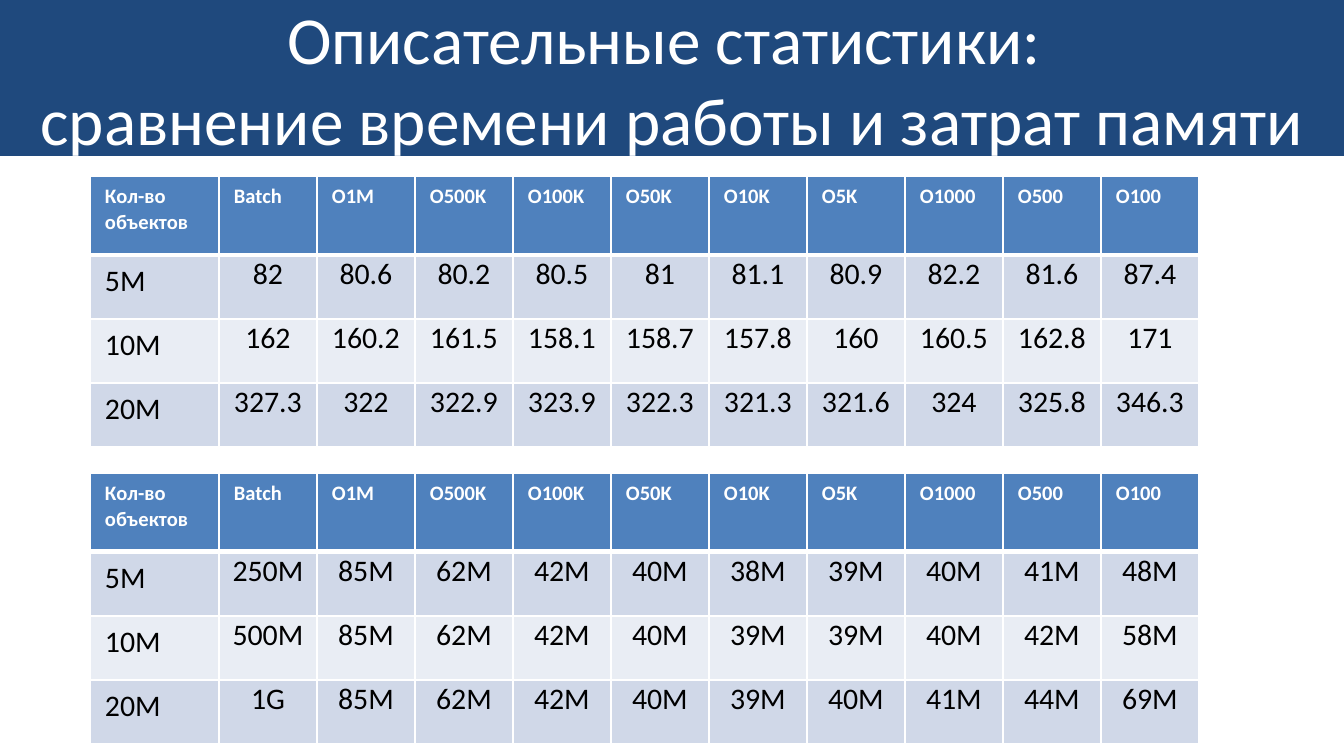
from lxml import etree
from pptx import Presentation
from pptx.dml.color import RGBColor
from pptx.enum.shapes import MSO_SHAPE
from pptx.enum.text import MSO_ANCHOR, PP_ALIGN
from pptx.oxml.ns import qn
from pptx.util import Pt

EMU_PER_PX = 914400 / 134.4
RECTANGLE = MSO_SHAPE.RECTANGLE
MIDDLE = MSO_ANCHOR.MIDDLE
LEFT, CENTER = PP_ALIGN.LEFT, PP_ALIGN.CENTER

NAVY = RGBColor(0x1F, 0x49, 0x7D)
BLUE = RGBColor(0x4F, 0x81, 0xBD)
BAND_DARK = RGBColor(0xD0, 0xD8, 0xE8)
BAND_LIGHT = RGBColor(0xE9, 0xED, 0xF4)
WHITE = RGBColor(0xFF, 0xFF, 0xFF)
BLACK = RGBColor(0, 0, 0)

TITLE_FONT = {"name": "Calibri", "size": Pt(36), "bold": False}
HEADER_FONT = {"name": "Calibri", "size": Pt(11), "bold": True}
BODY_FONT = {"name": "Calibri", "size": Pt(16), "bold": False}

COLUMN_WIDTHS = [129] + [98] * 10
ROW_HEIGHTS = [79] + [64] * 3
LABEL_MARGINS = (15, 8, 15, 8)
VALUE_MARGINS = (1, 1, 1, 0)

TITLE = "Описательные статистики: \vсравнение времени работы и затрат памяти"
HEADER = ["Кол-во объектов", "Batch", "O1M", "O500K", "O100K", "O50K",
          "O10K", "O5K", "O1000", "O500", "O100"]
RUN_TIMES = [
    "5M 82 80.6 80.2 80.5 81 81.1 80.9 82.2 81.6 87.4".split(),
    "10M 162 160.2 161.5 158.1 158.7 157.8 160 160.5 162.8 171".split(),
    "20M 327.3 322 322.9 323.9 322.3 321.3 321.6 324 325.8 346.3".split(),
]
MEMORY_USE = [
    "5M 250M 85M 62M 42M 40M 38M 39M 40M 41M 48M".split(),
    "10M 500M 85M 62M 42M 40M 39M 39M 40M 42M 58M".split(),
    "20M 1G 85M 62M 42M 40M 39M 40M 41M 44M 69M".split(),
]


def px(length):
    """Turn whole pixels into EMU."""
    return round(length * EMU_PER_PX)


def write_text(frame, text, font, color, align):
    """Write one formatted paragraph into a text frame."""
    paragraph = frame.paragraphs[0]
    paragraph.text = text
    paragraph.alignment = align
    for run in paragraph.runs:
        for attribute, value in font.items():
            setattr(run.font, attribute, value)
        run.font.color.rgb = color


def add_title(slide):
    """Draw the title band across the top."""
    band = slide.shapes.add_shape(RECTANGLE, 0, 0, px(1344), px(156))
    band.shadow.inherit = False
    band.fill.solid()
    band.fill.fore_color.rgb = NAVY
    band.line.fill.background()
    band.text_frame.word_wrap = True
    band.text_frame.vertical_anchor = MIDDLE
    write_text(band.text_frame, TITLE, TITLE_FONT, WHITE, CENTER)


def set_borders(cell, bottom_width):
    """Give a cell white borders, with its own bottom width in points."""
    properties = cell._tc.get_or_add_tcPr()
    for side, width in (("L", 1), ("R", 1), ("T", 1), ("B", bottom_width)):
        line = etree.SubElement(properties, qn(f"a:ln{side}"), w=str(Pt(width)))
        fill = etree.SubElement(line, qn("a:solidFill"))
        etree.SubElement(fill, qn("a:srgbClr"), val=str(WHITE))


def fill_cell(cell, text, row, column):
    """Style a cell by its place in the table."""
    is_header = row == 0
    is_value = row > 0 and column > 0
    set_borders(cell, 3 if is_header else 1)
    cell.fill.solid()
    band = BAND_DARK if row % 2 else BAND_LIGHT
    cell.fill.fore_color.rgb = BLUE if is_header else band
    margins = VALUE_MARGINS if is_value else LABEL_MARGINS
    for side, margin in zip(("left", "top", "right", "bottom"), margins):
        setattr(cell, f"margin_{side}", px(margin))
    write_text(cell.text_frame, text,
               HEADER_FONT if is_header else BODY_FONT,
               WHITE if is_header else BLACK,
               CENTER if is_value else LEFT)


def add_statistics(slide, top, measurements):
    """Add one table of measurements under the common header."""
    rows = [HEADER] + measurements
    table = slide.shapes.add_table(
        len(rows), len(HEADER), px(90), px(top),
        px(sum(COLUMN_WIDTHS)), px(sum(ROW_HEIGHTS))).table
    for column, width in zip(table.columns, COLUMN_WIDTHS):
        column.width = px(width)
    for row, height in zip(table.rows, ROW_HEIGHTS):
        row.height = px(height)
    for r, texts in enumerate(rows):
        for c, text in enumerate(texts):
            fill_cell(table.cell(r, c), text, r, c)


def main():
    """Build the slide and save it."""
    presentation = Presentation()
    presentation.slide_width = px(1344)
    presentation.slide_height = px(756)
    slide = presentation.slides.add_slide(presentation.slide_layouts[6])
    add_title(slide)
    add_statistics(slide, 176, RUN_TIMES)
    add_statistics(slide, 473, MEMORY_USE)
    presentation.save("out.pptx")


if __name__ == "__main__":
    main()
